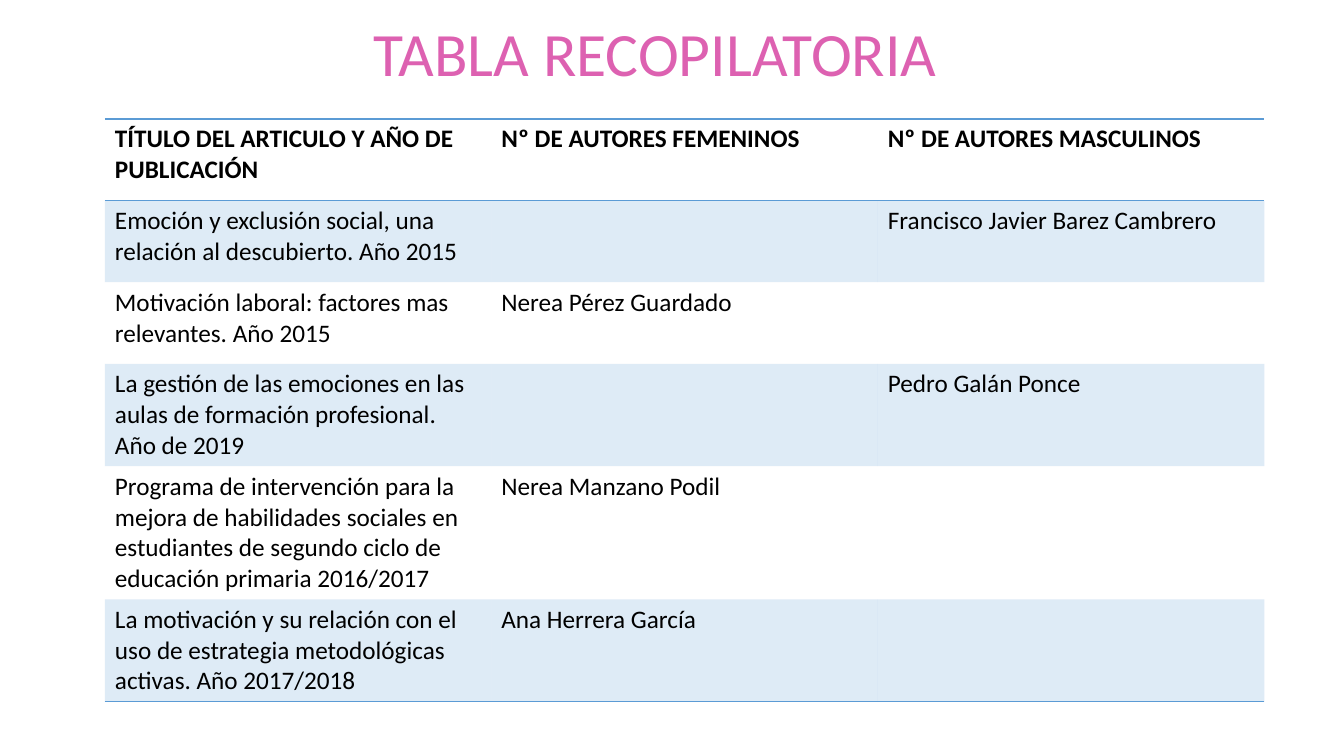
from dataclasses import dataclass

from lxml import etree
from pptx import Presentation
from pptx.dml.color import RGBColor
from pptx.enum.text import MSO_ANCHOR, MSO_AUTO_SIZE, PP_ALIGN
from pptx.oxml.ns import qn
from pptx.slide import Slide
from pptx.table import _Cell
from pptx.util import Inches, Pt

CENTER = PP_ALIGN.CENTER
MIDDLE = MSO_ANCHOR.MIDDLE
NO_AUTOFIT = MSO_AUTO_SIZE.NONE
TITLE_ONLY_LAYOUT = 5
PLAIN_TABLE_STYLE = "{2D5ABB26-0587-4C30-8999-92F81FD0307C}"


@dataclass(frozen=True)
class Theme:
    font: str = "Calibri"
    title_color: str = "DD61B1"
    text_color: str = "000000"
    accent: str = "5B9BD5"
    band_opacity: int = 20
    title_size: int = 44
    table_size: int = 18
    rule_width: int = 1


@dataclass(frozen=True)
class Article:
    title: str
    female_author: str = ""
    male_author: str = ""


THEME = Theme()
HEADINGS = (
    "TÍTULO DEL ARTICULO Y AÑO DE PUBLICACIÓN",
    "Nº DE AUTORES FEMENINOS",
    "Nº DE AUTORES MASCULINOS",
)
ARTICLES = (
    Article("Emoción y exclusión social, una relación al descubierto. Año 2015",
            male_author="Francisco Javier Barez Cambrero"),
    Article("Motivación laboral: factores mas relevantes. Año 2015",
            female_author="Nerea Pérez Guardado"),
    Article("La gestión de las emociones en las aulas de formación profesional. Año de 2019",
            male_author="Pedro Galán Ponce"),
    Article("Programa de intervención para la mejora de habilidades sociales en "
            "estudiantes de segundo ciclo de educación primaria 2016/2017",
            female_author="Nerea Manzano Podil"),
    Article("La motivación y su relación con el uso de estrategia metodológicas "
            "activas. Año 2017/2018",
            female_author="Ana Herrera García"),
)


def add_title(slide: Slide, text: str) -> None:
    title = slide.shapes.title
    title.left, title.top = Inches(0.82), Inches(0.14)
    title.width, title.height = Inches(11.5), Inches(0.84)
    frame = title.text_frame
    frame.text = text
    frame.auto_size = NO_AUTOFIT
    frame.vertical_anchor = MIDDLE
    paragraph = frame.paragraphs[0]
    paragraph.alignment = CENTER
    paragraph.line_spacing = 0.9
    paragraph.font.name = THEME.font
    paragraph.font.size = Pt(THEME.title_size)
    paragraph.font.color.rgb = RGBColor.from_string(THEME.title_color)


def add_rule(cell: _Cell, side: str) -> None:
    """Draw a border line on one side of a cell: lnT or lnB, in that order."""
    properties = cell._tc.get_or_add_tcPr()
    line = etree.SubElement(properties, qn(f"a:{side}"), w=str(Pt(THEME.rule_width)))
    fill = etree.SubElement(line, qn("a:solidFill"))
    etree.SubElement(fill, qn("a:srgbClr"), val=THEME.accent)


def fill_band(cell: _Cell) -> None:
    cell.fill.solid()
    cell.fill.fore_color.rgb = RGBColor.from_string(THEME.accent)
    color = cell._tc.tcPr.find(f".//{qn('a:solidFill')}[last()]/{qn('a:srgbClr')}")
    for color in cell._tc.tcPr.findall(f"{qn('a:solidFill')}/{qn('a:srgbClr')}"):
        etree.SubElement(color, qn("a:alpha"), val=str(THEME.band_opacity * 1000))


def write_cell(cell: _Cell, text: str, bold: bool) -> None:
    cell.text = text
    font = cell.text_frame.paragraphs[0].font
    font.name = THEME.font
    font.size = Pt(THEME.table_size)
    font.bold = bold
    font.color.rgb = RGBColor.from_string(THEME.text_color)


def add_article_table(slide: Slide) -> None:
    rows = [HEADINGS] + [
        (article.title, article.female_author, article.male_author) for article in ARTICLES
    ]
    last = len(rows) - 1
    frame = slide.shapes.add_table(
        len(rows), len(HEADINGS), Inches(1.04), Inches(1.18), Inches(11.5), Inches(5.73)
    )
    table = frame.table
    table._tbl.tblPr.find(qn("a:tableStyleId")).text = PLAIN_TABLE_STYLE
    for row_index, texts in enumerate(rows):
        table.rows[row_index].height = Inches(0.9 if row_index == last else 0.81)
        for column_index, text in enumerate(texts):
            cell = table.cell(row_index, column_index)
            write_cell(cell, text, bold=row_index == 0)
            if row_index == 0:
                add_rule(cell, "lnT")
            if row_index in (0, last):
                add_rule(cell, "lnB")
            if row_index % 2:
                fill_band(cell)
            else:
                cell.fill.background()


def main() -> None:
    presentation = Presentation()
    presentation.slide_width = Inches(13.33)
    presentation.slide_height = Inches(7.5)
    slide = presentation.slides.add_slide(presentation.slide_layouts[TITLE_ONLY_LAYOUT])
    add_title(slide, "TABLA RECOPILATORIA ")
    add_article_table(slide)
    presentation.save("out.pptx")


if __name__ == "__main__":
    main()
